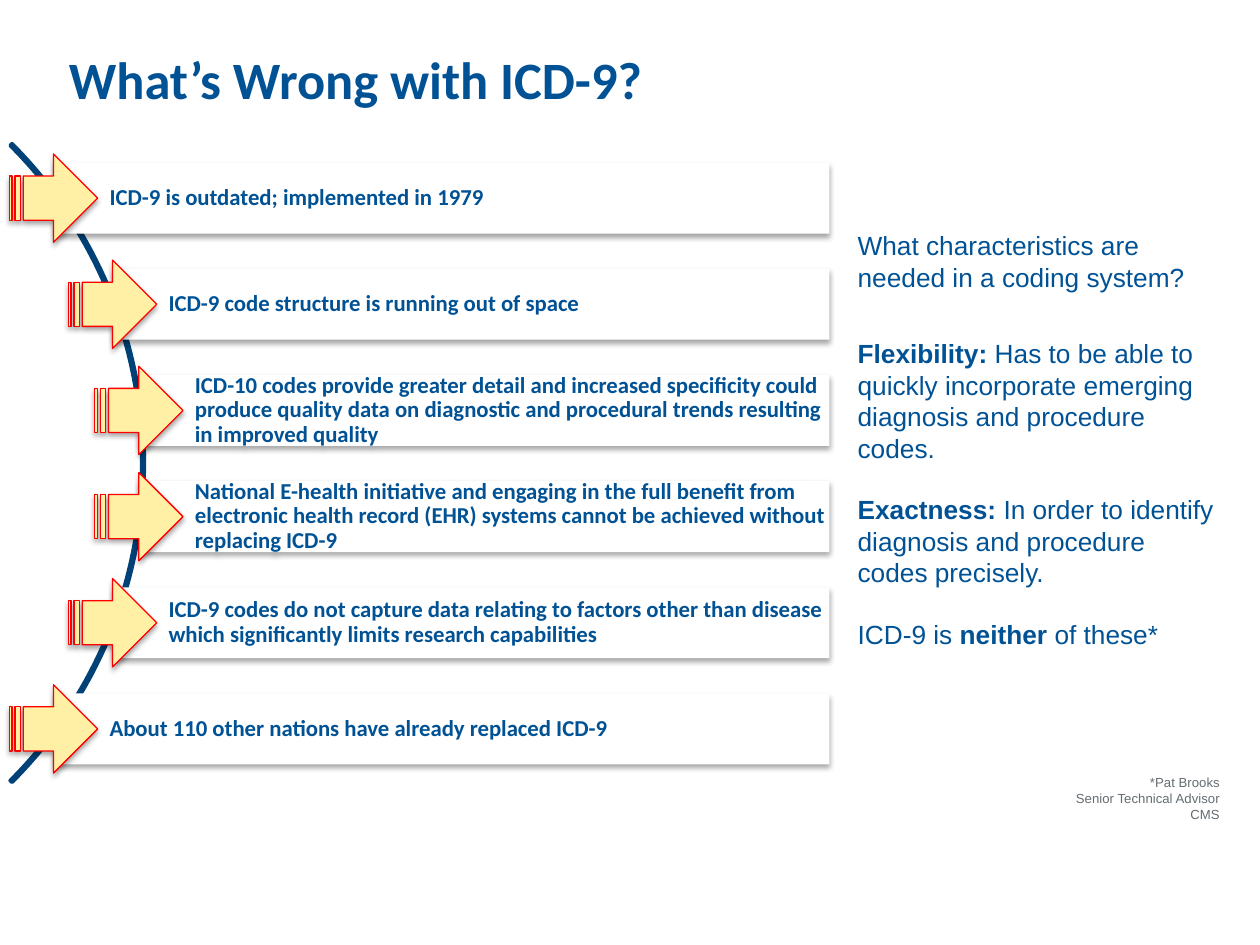
from lxml import etree
from pptx import Presentation
from pptx.dml.color import RGBColor
from pptx.enum import shapes, text
from pptx.oxml import ns
from pptx.util import Cm, Pt

BLUE = RGBColor(0x00, 0x52, 0x95)
DARK_BLUE = RGBColor(0x00, 0x42, 0x77)
WHITE = RGBColor(0xFF, 0xFF, 0xFF)
YELLOW = RGBColor(0xFF, 0xF0, 0xA5)
RED = RGBColor(0xFF, 0x00, 0x00)
GRAY = RGBColor(0x64, 0x6D, 0x72)


def add_soft_shadow(shape):
    shape.shadow.inherit = False
    effects = shape._element.spPr.find(ns.qn("a:effectLst"))
    shadow = etree.SubElement(
        effects, ns.qn("a:outerShdw"), blurRad=str(Pt(3.1)), dist=str(Pt(1.8)),
        dir="5400000", algn="t", rotWithShape="0")
    color = etree.SubElement(shadow, ns.qn("a:srgbClr"), val="000000")
    etree.SubElement(color, ns.qn("a:alpha"), val="35000")


def style_font(paragraph, name, size, color, bold=None):
    paragraph.font.name = name
    paragraph.font.size = Pt(size)
    paragraph.font.color.rgb = color
    paragraph.font.bold = bold


presentation = Presentation()
presentation.slide_width, presentation.slide_height = Cm(25.4), Cm(19.05)
slide = presentation.slides.add_slide(presentation.slide_layouts[6])

# Title
title = slide.shapes.add_textbox(Cm(1.14), Cm(0), Cm(22.86), Cm(3.18))
title.text_frame.word_wrap = True
title.text_frame.vertical_anchor = text.MSO_ANCHOR.MIDDLE
title.text_frame.text = "What’s Wrong with ICD-9?"
style_font(title.text_frame.paragraphs[0], "Calibri", 30, BLUE, True)

# Curve behind the reasons
arc = slide.shapes.add_shape(
    shapes.MSO_SHAPE.BLOCK_ARC, Cm(-15.3), Cm(0.23), Cm(18.21), Cm(18.21))
for index, value in enumerate((189, 27, 0.003)):
    arc.adjustments[index] = value
arc.fill.background()
arc.line.color.rgb = DARK_BLUE
arc.line.width = Pt(2)
arc.shadow.inherit = False

# Reasons: each bar has an arrow centred on its left edge
REASONS = [
    (1.08, "ICD-9 is outdated; implemented in 1979"),
    (2.27, "ICD-9 code structure is running out of space"),
    (2.8, "ICD-10 codes provide greater detail and increased specificity could "
          "produce quality data on diagnostic and procedural trends resulting in "
          "improved quality"),
    (2.8, "National E-health initiative and engaging in the full benefit from "
          "electronic health record (EHR) systems cannot be achieved without "
          "replacing ICD-9"),
    (2.27, "ICD-9 codes do not capture data relating to factors other than disease "
           "which significantly limits research capabilities"),
    (1.08, "About 110 other nations have already replaced ICD-9"),
]
BAR_RIGHT, BAR_HEIGHT = 16.72, 1.43
FIRST_TOP, ROW_PITCH = 3.28, 2.14
ARROW_SIZE = 1.78

for row, (left, reason) in enumerate(REASONS):
    top = FIRST_TOP + row * ROW_PITCH
    bar = slide.shapes.add_shape(
        shapes.MSO_SHAPE.RECTANGLE,
        Cm(left), Cm(top), Cm(BAR_RIGHT - left), Cm(BAR_HEIGHT))
    bar.fill.solid()
    bar.fill.fore_color.rgb = WHITE
    bar.line.fill.background()
    add_soft_shadow(bar)
    frame = bar.text_frame
    frame.word_wrap = True
    frame.vertical_anchor = text.MSO_ANCHOR.MIDDLE
    frame.margin_left = Cm(1.13)
    frame.margin_right = Cm(0.08)
    frame.margin_top = frame.margin_bottom = Cm(0.1)
    frame.text = reason
    paragraph = frame.paragraphs[0]
    paragraph.alignment = text.PP_ALIGN.LEFT
    paragraph.line_spacing = 0.9
    style_font(paragraph, "Calibri", 13, BLUE, True)

    arrow = slide.shapes.add_shape(
        shapes.MSO_SHAPE.STRIPED_RIGHT_ARROW,
        Cm(left - ARROW_SIZE / 2), Cm(top + (BAR_HEIGHT - ARROW_SIZE) / 2),
        Cm(ARROW_SIZE), Cm(ARROW_SIZE))
    arrow.fill.solid()
    arrow.fill.fore_color.rgb = YELLOW
    arrow.line.color.rgb = RED
    arrow.line.width = Pt(0.75)
    add_soft_shadow(arrow)

# Needed characteristics: space before, then (text, bold) runs
CHARACTERISTICS = [
    (0, [("What characteristics are needed in a coding system?", False)]),
    (25.75, [("Flexibility:", True),
             (" Has to be able to quickly incorporate emerging diagnosis and "
              "procedure codes.", False)]),
    (17.25, [("Exactness:", True),
             (" In order to identify diagnosis and procedure codes precisely.", False)]),
    (17.25, [("ICD-9 is ", False), ("neither ", True), ("of these*", False)]),
]
sidebar = slide.shapes.add_textbox(Cm(17.04), Cm(4.5), Cm(7.74), Cm(8.92))
sidebar.text_frame.word_wrap = True
for index, (space, runs) in enumerate(CHARACTERISTICS):
    frame = sidebar.text_frame
    paragraph = frame.add_paragraph() if index else frame.paragraphs[0]
    if space:
        paragraph.space_before = Pt(space)
    style_font(paragraph, "Arial", 15, BLUE)
    for words, bold in runs:
        run = paragraph.add_run()
        run.text = words
        run.font.bold = bold

# Attribution
attribution = slide.shapes.add_textbox(Cm(18.64), Cm(15.49), Cm(6.2), Cm(1.22))
attribution.text_frame.word_wrap = True
attribution.text_frame.text = "*Pat Brooks\nSenior Technical Advisor\nCMS"
for paragraph in attribution.text_frame.paragraphs:
    paragraph.alignment = text.PP_ALIGN.RIGHT
    style_font(paragraph, "Arial", 7.5, GRAY)

presentation.save("out.pptx")
